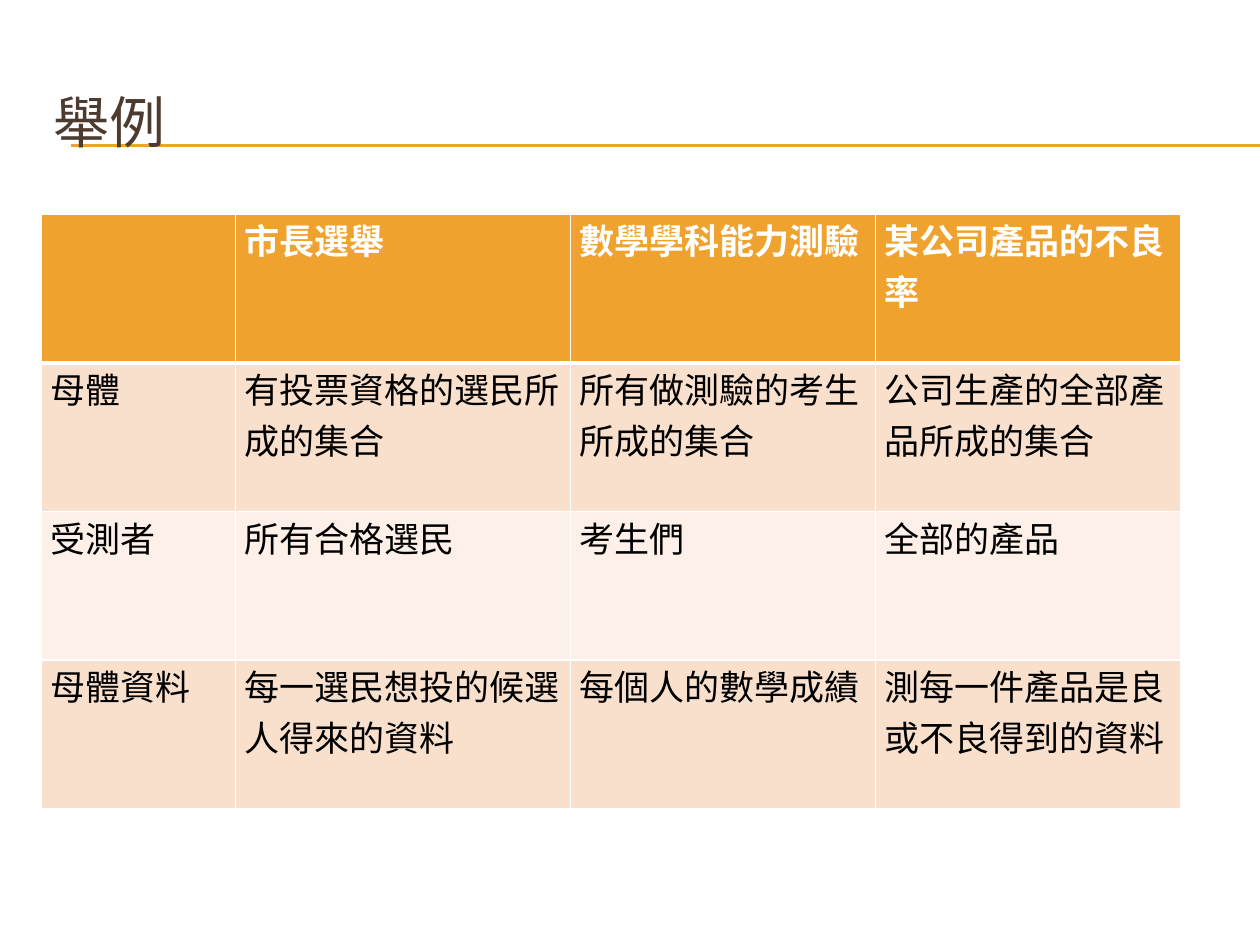
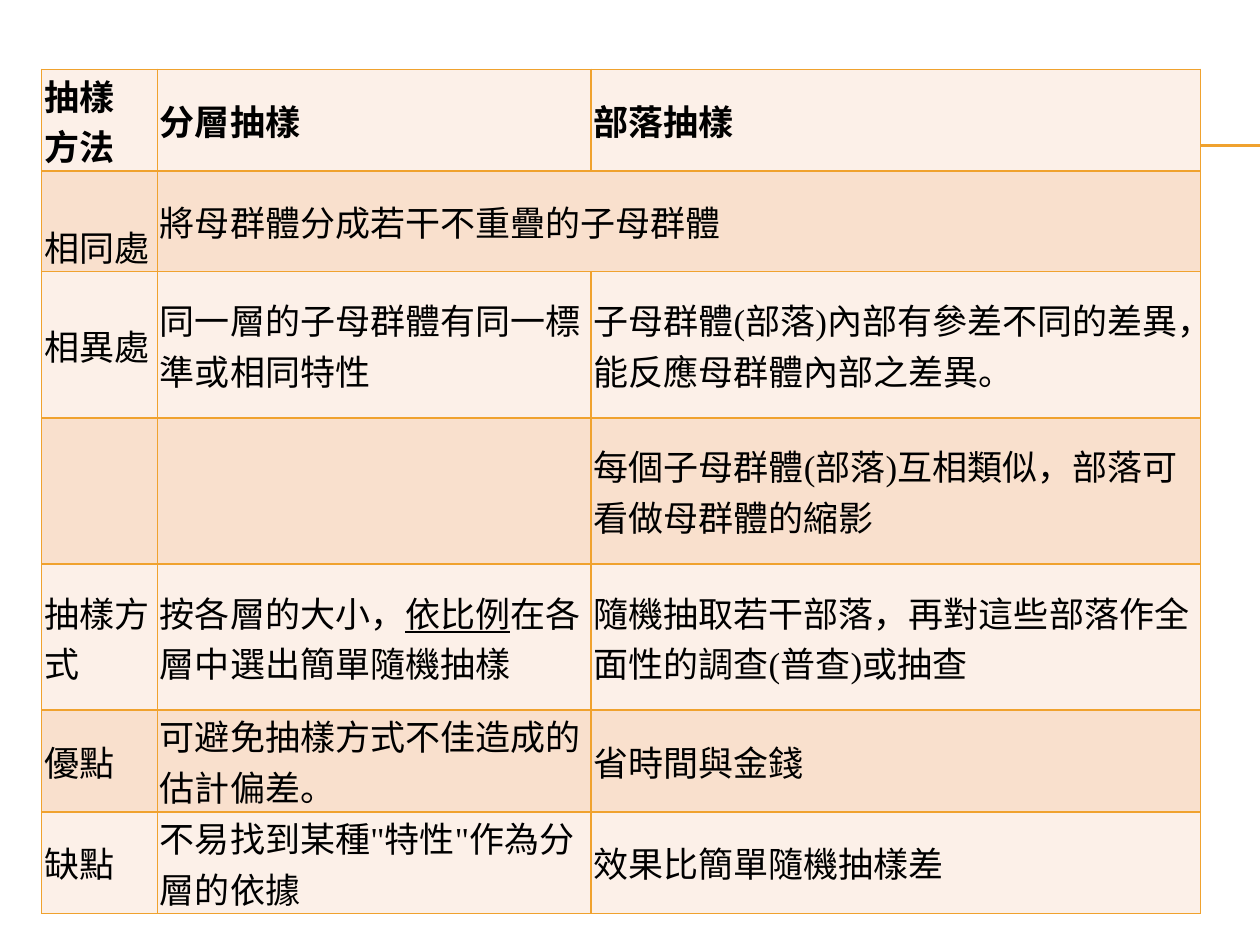
import pptx
import pptx.dml.color
import pptx.enum.shapes
import pptx.enum.text
import pptx.oxml
import pptx.oxml.ns
import pptx.util
from lxml import etree

Inches = pptx.util.Inches
Pt = pptx.util.Pt
ANCHOR = pptx.enum.text.MSO_ANCHOR

COLORS = {
    "accent": "F0A22E",
    "title": "4E3B30",
    "dark_band": "F9E0CD",
    "light_band": "FCF0E8",
    "white": "FFFFFF",
    "black": "000000",
}
TITLE_FONT = "Roboto"
TABLE_FONT = "Times New Roman"

EXAMPLE_ROWS = [
    ["", "市長選舉", "數學學科能力測驗", "某公司產品的不良率"],
    ["母體", "有投票資格的選民所成的集合", "所有做測驗的考生所成的集合",
     "公司生產的全部產品所成的集合"],
    ["受測者", "所有合格選民", "考生們", "全部的產品"],
    ["母體資料", "每一選民想投的候選人得來的資料", "每個人的數學成績",
     "測每一件產品是良或不良得到的資料"],
]

# Underscores enclose underlined words; a line feed starts a new paragraph.
SAMPLING_ROWS = [
    ["抽樣\n方法", "分層抽樣", "部落抽樣"],
    ["相同處", "將母群體分成若干不重疊的子母群體", ""],
    ["相異處", "同一層的子母群體有同一標準或相同特性",
     "子母群體(部落)內部有參差不同的差異，能反應母群體內部之差異。"],
    ["", "", "每個子母群體(部落)互相類似，部落可看做母群體的縮影"],
    ["抽樣方式", "按各層的大小，_依比例_在各層中選出簡單隨機抽樣",
     "隨機抽取若干部落，再對這些部落作全面性的調查(普查)或抽查"],
    ["優點", "可避免抽樣方式不佳造成的估計偏差。", "省時間與金錢"],
    ["缺點", "不易找到某種\"特性\"作為分層的依據", "效果比簡單隨機抽樣差"],
]


def color(name):
    return pptx.dml.color.RGBColor.from_string(COLORS[name])


def write_text(text_frame, text, size=20, font=TABLE_FONT, text_color="black", bold=False):
    """Fill a text frame, one paragraph a line."""
    text_frame.word_wrap = True
    for index, line in enumerate(text.split("\n")):
        paragraph = text_frame.add_paragraph() if index else text_frame.paragraphs[0]
        for position, part in enumerate(line.split("_")):
            if not part:
                continue
            run = paragraph.add_run()
            run.text = part
            run.font.size = Pt(size)
            run.font.name = font
            run.font.bold = bold
            run.font.underline = position % 2 == 1
            run.font.color.rgb = color(text_color)


def add_rules(slide):
    """Draw the double line shared by all slides."""
    for top in (1.15, 1.16):
        rule = slide.shapes.add_connector(
            pptx.enum.shapes.MSO_CONNECTOR.STRAIGHT,
            Inches(0.56), Inches(top), Inches(10), Inches(top))
        rule.line.color.rgb = color("accent")
        rule.line.width = Pt(0.75)
        etree.SubElement(rule._element.spPr, pptx.oxml.ns.qn("a:effectLst"))


def add_title(slide, text):
    box = slide.shapes.add_textbox(Inches(0.33), Inches(0.5), Inches(9.5), Inches(0.92))
    box.text_frame.vertical_anchor = ANCHOR.MIDDLE
    write_text(box.text_frame, text, size=32, font=TITLE_FONT, text_color="title")


def set_borders(cell, border_color, widths):
    """Set the left, right, top and bottom borders, widths in points."""
    properties = cell._tc.get_or_add_tcPr()
    for side, width in zip("LRTB", widths):
        properties.append(pptx.oxml.parse_xml(
            f'<a:ln{side} {pptx.oxml.ns.nsdecls("a")} w="{Pt(width)}"><a:solidFill>'
            f'<a:srgbClr val="{COLORS[border_color]}"/></a:solidFill></a:ln{side}>'))


def add_table(slide, rows, left, top, column_widths, row_heights, side_margin, anchor,
              border_color, header_fill, header_text, header_rule):
    """Add a banded table; header_rule is the line width under the first row."""
    table = slide.shapes.add_table(
        len(rows), len(column_widths), Inches(left), Inches(top),
        Inches(sum(column_widths)), Inches(sum(row_heights))).table
    for column, width in zip(table.columns, column_widths):
        column.width = Inches(width)
    for row_index, (texts, height) in enumerate(zip(rows, row_heights)):
        table.rows[row_index].height = Inches(height)
        is_header = row_index == 0
        band = "dark_band" if row_index % 2 else "light_band"
        for column_index, text in enumerate(texts):
            cell = table.cell(row_index, column_index)
            set_borders(cell, border_color, (
                1, 1, header_rule if row_index == 1 else 1, header_rule if is_header else 1))
            cell.fill.solid()
            cell.fill.fore_color.rgb = color(header_fill if is_header else band)
            cell.margin_left = cell.margin_right = Inches(side_margin)
            cell.margin_top = cell.margin_bottom = 0
            cell.vertical_anchor = anchor
            write_text(cell.text_frame, text, bold=is_header,
                       text_color=header_text if is_header else "black")
    return table


def add_slide(presentation):
    slide = presentation.slides.add_slide(presentation.slide_layouts[6])
    add_rules(slide)
    return slide


def build_examples(presentation):
    slide = add_slide(presentation)
    add_title(slide, "舉例")
    add_table(slide, EXAMPLE_ROWS, 0.33, 1.7, [1.54, 2.66, 2.42, 2.42], [1.18] * 4,
              side_margin=0.07, anchor=ANCHOR.TOP, border_color="white",
              header_fill="accent", header_text="white", header_rule=3)


def build_sampling_comparison(presentation):
    slide = add_slide(presentation)
    short, tall = 0.8, 1.16
    table = add_table(slide, SAMPLING_ROWS, 0.33, 0.55, [0.92, 3.44, 4.84],
                      [short] * 2 + [tall] * 3 + [short] * 2,
                      side_margin=0.02, anchor=ANCHOR.MIDDLE, border_color="accent",
                      header_fill="light_band", header_text="black", header_rule=1)
    # The shared trait spans both methods, and its label sits low
    table.cell(1, 1).merge(table.cell(1, 2))
    table.cell(1, 0).vertical_anchor = ANCHOR.BOTTOM


def main():
    presentation = pptx.Presentation()
    presentation.slide_width = Inches(10)
    presentation.slide_height = Inches(7.5)
    build_examples(presentation)
    build_sampling_comparison(presentation)
    presentation.save("out.pptx")


if __name__ == "__main__":
    main()
